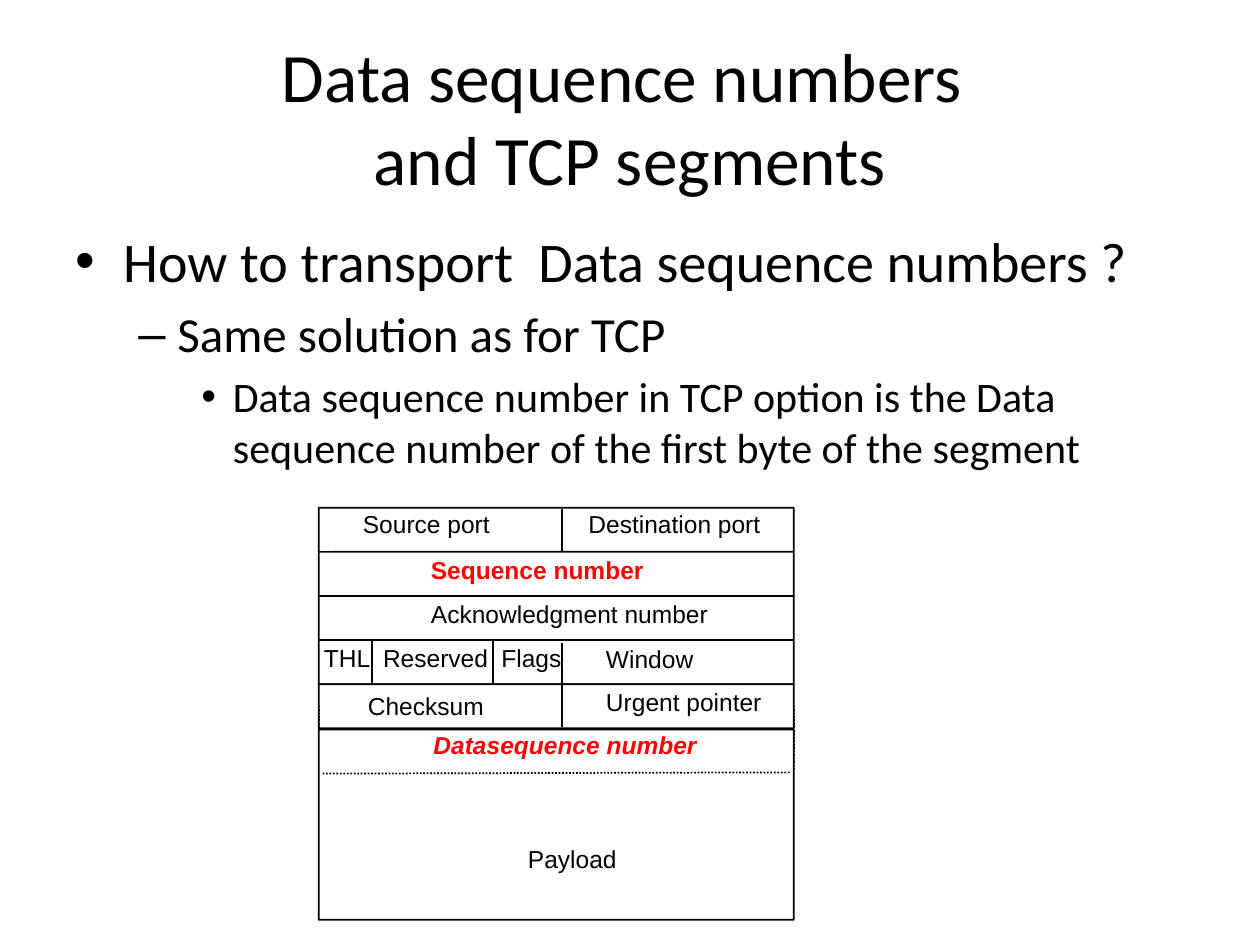
"""Build a slide on data sequence numbers in TCP segments."""
from lxml import etree
from pptx import Presentation
from pptx.dml.color import RGBColor
from pptx.enum.dml import MSO_LINE
from pptx.enum.shapes import MSO_CONNECTOR, MSO_SHAPE
from pptx.enum.text import MSO_ANCHOR, PP_ALIGN
from pptx.oxml.ns import qn
from pptx.util import Inches, Pt

STRAIGHT = MSO_CONNECTOR.STRAIGHT
ROUNDED = MSO_SHAPE.ROUNDED_RECTANGLE
DOTTED = MSO_LINE.ROUND_DOT
MIDDLE = MSO_ANCHOR.MIDDLE
CENTER = PP_ALIGN.CENTER

COLORS = {"ink": "000000", "paper": "FFFFFF", "accent": "FF0000"}
HEADER_LEFT, HEADER_TOP, HEADER_WIDTH, ROW_HEIGHT, ROW_COUNT = 2.53, 4.03, 3.77, 0.35, 5

BULLETS = [
    ("How to transport  Data sequence numbers ?", 32, "•", 0.38, 0.38),
    ("Same solution as for TCP", 28, "–", 0.81, 0.31),
    ("Data sequence number in TCP option is the Data sequence number "
     "of the first byte of the segment", 24, "•", 1.25, 0.25),
]
FIELDS = [
    ("Source port", 2.88, 4.08, 1.02),
    ("Destination port", 4.67, 4.08, 1.38),
    ("Acknowledgment number", 3.42, 4.79, 2.21),
    ("THL", 2.57, 5.14, 0.38),
    ("Reserved", 3.04, 5.14, 0.87),
    ("Flags", 3.98, 5.14, 0.5),
    ("Window", 4.81, 5.15, 0.7),
    ("Checksum", 2.92, 5.52, 0.93),
    ("Urgent pointer", 4.81, 5.49, 1.24),
]
DIVIDERS = [(4.46, 4.04), (2.95, 5.09), (3.91, 5.09), (4.46, 5.1), (4.46, 5.44)]


class SlideBuilder:
    """Hold the style and the current slide."""

    def __init__(self, slide):
        self.slide = slide
        self.heading_font = "Calibri"
        self.label_font = "Arial"
        self.line_width = Pt(1)

    def color(self, name):
        """Return a named colour."""
        return RGBColor.from_string(COLORS[name])

    def style(self, paragraph, name, size, color="ink"):
        """Set the font of a paragraph."""
        font = paragraph.font
        font.name, font.size = name, Pt(size)
        font.color.rgb = self.color(color)

    def text_box(self, left, top, width, height):
        """Add an empty text box."""
        return self.slide.shapes.add_textbox(
            Inches(left), Inches(top), Inches(width), Inches(height))

    def title(self, text):
        """Add the centred title."""
        frame = self.text_box(0.5, 0.3, 9, 1.25).text_frame
        frame.word_wrap = True
        frame.vertical_anchor = MIDDLE
        paragraph = frame.paragraphs[0]
        paragraph.text = text
        paragraph.alignment = CENTER
        self.style(paragraph, self.heading_font, 39.6)

    def bullets(self, items):
        """Add the nested bullet list."""
        frame = self.text_box(0.5, 1.75, 9, 4.95).text_frame
        frame.word_wrap = True
        for level, (text, size, mark, margin, hanging) in enumerate(items):
            paragraph = frame.add_paragraph() if level else frame.paragraphs[0]
            paragraph.text = text
            paragraph.level = level
            paragraph.space_before = Pt(size * 0.2)
            self.style(paragraph, self.heading_font, size)
            properties = paragraph._p.get_or_add_pPr()
            properties.set("marL", str(Inches(margin)))
            properties.set("indent", str(-Inches(hanging)))
            bullet_font = etree.Element(qn("a:buFont"), typeface="Arial")
            bullet = etree.Element(qn("a:buChar"), char=mark)
            position = list(properties).index(properties.find(qn("a:defRPr")))
            properties[position:position] = [bullet_font, bullet]

    def box(self, left, top, width, height, rounding):
        """Add an outlined box."""
        shape = self.slide.shapes.add_shape(
            ROUNDED, Inches(left), Inches(top), Inches(width), Inches(height))
        shape.adjustments[0] = rounding
        shape.shadow.inherit = False
        shape.fill.solid()
        shape.fill.fore_color.rgb = self.color("paper")
        shape.line.color.rgb = self.color("ink")
        shape.line.width = self.line_width

    def line(self, start, end, dotted=False):
        """Add a solid or dotted line."""
        connector = self.slide.shapes.add_connector(
            STRAIGHT, *(Inches(value) for value in (*start, *end)))
        connector.line.color.rgb = self.color("ink")
        connector.line.width = self.line_width
        if dotted:
            connector.line.dash_style = DOTTED
        etree.SubElement(connector._element.spPr, qn("a:effectLst"))

    def label(self, text, left, top, width, color="ink", bold=False, italic=False):
        """Add a field label."""
        shape = self.text_box(left, top, width, 0.2)
        shape.fill.solid()
        shape.fill.fore_color.rgb = self.color("paper")
        frame = shape.text_frame
        frame.word_wrap = False
        frame.margin_left = frame.margin_right = frame.margin_top = frame.margin_bottom = 0
        paragraph = frame.paragraphs[0]
        paragraph.text = text
        paragraph.line_spacing = 0.84
        self.style(paragraph, self.label_font, 14, color)
        paragraph.font.bold, paragraph.font.italic = bold, italic


def main():
    """Build and save the slide."""
    presentation = Presentation()
    presentation.slide_width, presentation.slide_height = Inches(10), Inches(7.5)
    builder = SlideBuilder(presentation.slides.add_slide(presentation.slide_layouts[6]))

    builder.title("Data sequence numbers \vand TCP segments")
    builder.bullets(BULLETS)

    for row in range(ROW_COUNT):
        builder.box(HEADER_LEFT, HEADER_TOP + row * ROW_HEIGHT, HEADER_WIDTH, ROW_HEIGHT, 0.005)
    for field in FIELDS:
        builder.label(*field)
    builder.label("Sequence number", 3.42, 4.44, 1.7, "accent", bold=True)
    for x, top in DIVIDERS:
        builder.line((x, top), (x, top + 0.33))

    for x in (HEADER_LEFT, HEADER_LEFT + HEADER_WIDTH):
        builder.line((x, 5.6), (x, 6.1), dotted=True)
    builder.box(HEADER_LEFT, 5.79, HEADER_WIDTH, 1.51, 0.001)
    builder.label("Payload", 4.19, 6.74, 0.72)
    builder.label("Datasequence number", 3.44, 5.83, 2.15, "accent", bold=True, italic=True)
    builder.line((2.56, 6.14), (6.27, 6.13), dotted=True)

    presentation.save("out.pptx")


if __name__ == "__main__":
    main()
